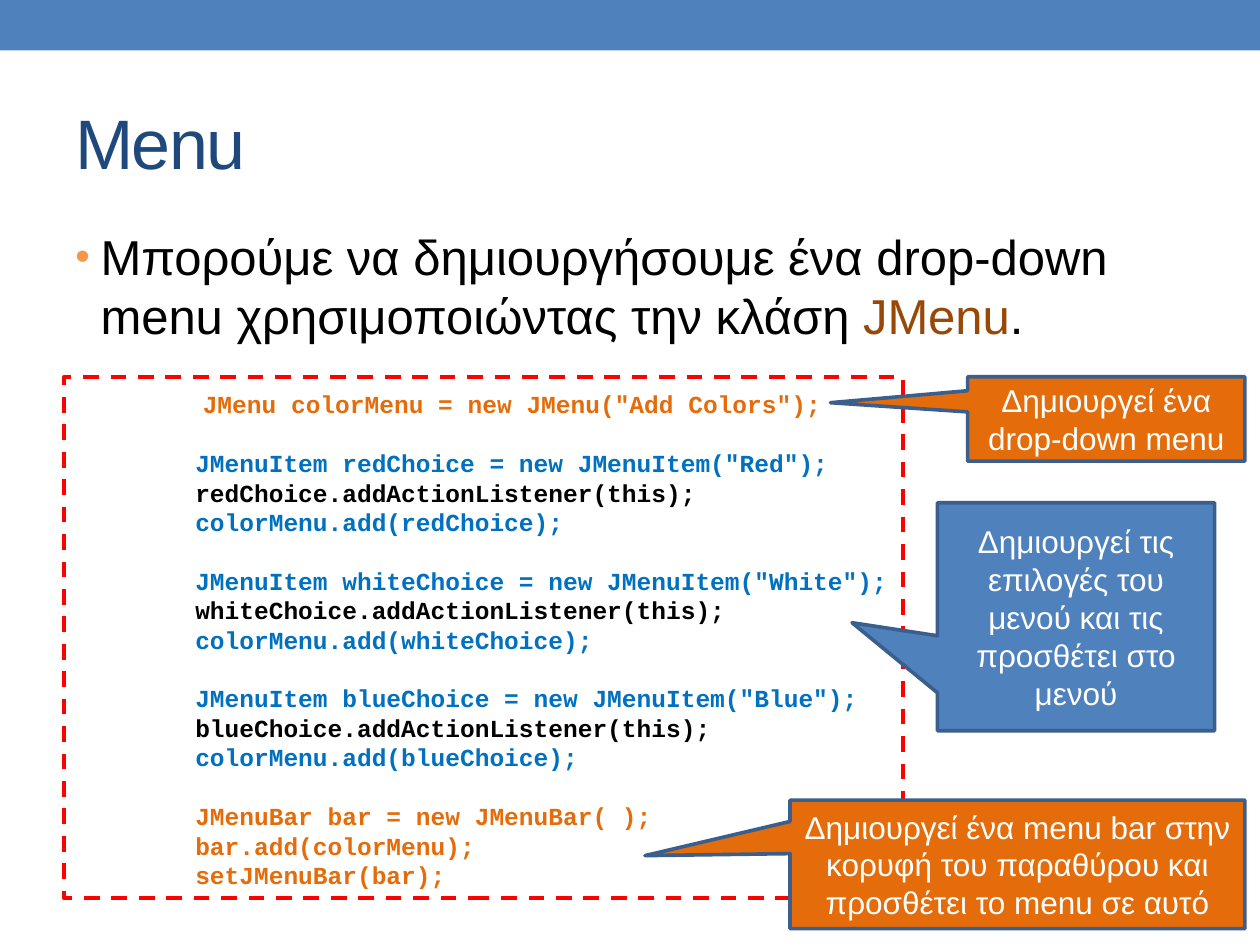
from pptx import Presentation
from pptx.dml.color import RGBColor
from pptx.enum.dml import MSO_LINE
from pptx.enum.shapes import MSO_SHAPE
from pptx.enum.text import MSO_ANCHOR, PP_ALIGN
from pptx.oxml.ns import qn
from pptx.util import Inches, Pt
from lxml.etree import SubElement

COLORS = {
    "blue": "4F81BD", "navy": "1F497D", "orange": "E46C0A", "brown": "984807",
    "code_blue": "0070C0", "black": "000000", "white": "FFFFFF",
    "red": "FF0000", "outline": "3A5F8C", "bullet": "F79646",
}

CHOICES = ["red", "white", "blue"]

CALLOUTS = [
    ((7.68, 2.99, 2.2, 0.67), (-0.995, -0.192), "orange",
     "Δημιουργεί ένα drop-down menu"),
    ((7.44, 3.99, 2.2, 1.81), (-0.808, 0.026), "blue",
     "Δημιουργεί τις επιλογές του μενού και τις προσθέτει στο μενού"),
    ((6.27, 6.35, 3.61, 1.02), (-0.819, -0.068), "orange",
     "Δημιουργεί ένα menu bar στην κορυφή του παραθύρου και προσθέτει το menu σε αυτό"),
]


def rgb(name):
    return RGBColor.from_string(COLORS[name])


def add_run(p, text, size=18, color="black", font="Arial", bold=False, spacing=None):
    r = p.add_run()
    r.text = text
    r.font.size = Pt(size)
    r.font.name = font
    r.font.bold = bold
    r.font.color.rgb = rgb(color)
    if spacing is not None:
        r._r.get_or_add_rPr().set("spc", str(spacing))
    return r


def add_box(s, kind, at, fill=None, line=None, width=1):
    sp = s.shapes.add_shape(kind, *map(Inches, at))
    sp.shadow.inherit = False
    if fill:
        sp.fill.solid()
        sp.fill.fore_color.rgb = rgb(fill)
    else:
        sp.fill.background()
    if line:
        sp.line.color.rgb = rgb(line)
        sp.line.width = Pt(width)
    else:
        sp.line.fill.background()
    return sp


def add_text_frame(s, at):
    tf = s.shapes.add_textbox(*map(Inches, at)).text_frame
    tf.word_wrap = True
    return tf


def add_title(s, text):
    tf = add_text_frame(s, (0.5, 0.58, 9, 1.08))
    tf.vertical_anchor = MSO_ANCHOR.MIDDLE
    add_run(tf.paragraphs[0], text, size=40, color="navy", spacing=-100)


def add_bullet(s, parts):
    p = add_text_frame(s, (0.5, 1.75, 9, 5.33)).paragraphs[0]
    p.space_before = Pt(5.6)
    pPr = p._p.get_or_add_pPr()
    pPr.set("marL", str(Inches(0.2)))
    pPr.set("indent", str(Inches(-0.2)))
    color = SubElement(pPr, qn("a:buClr"))
    SubElement(color, qn("a:srgbClr"), val=COLORS["bullet"])
    SubElement(pPr, qn("a:buSzPct"), val="85000")
    SubElement(pPr, qn("a:buFont"), typeface="Arial")
    SubElement(pPr, qn("a:buChar"), char="•")
    for text, color in parts:
        add_run(p, text, size=28, color=color)


def code_blocks():
    yield [('JMenu colorMenu = new JMenu("Add Colors");', "orange")]
    for name in CHOICES:
        yield [
            (f'JMenuItem {name}Choice = new JMenuItem("{name.title()}");', "code_blue"),
            (f"{name}Choice.addActionListener(this);", "black"),
            (f"colorMenu.add({name}Choice);", "code_blue"),
        ]
    yield [(line, "orange") for line in
           ("JMenuBar bar = new JMenuBar( );", "bar.add(colorMenu);", "setJMenuBar(bar);")]


def add_code(s):
    sp = add_box(s, MSO_SHAPE.RECTANGLE, (0.51, 2.99, 6.66, 4.14), line="red", width=2.25)
    sp.line.dash_style = MSO_LINE.DASH
    tf = sp.text_frame
    tf.word_wrap = True
    tf.vertical_anchor = MSO_ANCHOR.TOP
    tf.margin_left, tf.margin_top, tf.margin_right = Inches(1.04), Inches(0.1), 0
    pitch = Pt(16.8)
    for b, block in enumerate(code_blocks()):
        for i, (line, color) in enumerate(block):
            p = tf.add_paragraph() if b else tf.paragraphs[0]
            p.alignment = PP_ALIGN.LEFT
            p.line_spacing = pitch
            p.space_before = pitch if b and i == 0 else 0
            if b == 0:
                p._p.get_or_add_pPr().set("indent", str(Inches(0.06)))
            add_run(p, line, size=14, color=color, font="Courier New", bold=True)


def add_callout(s, at, tip, fill, text):
    sp = add_box(s, MSO_SHAPE.RECTANGULAR_CALLOUT, at, fill=fill, line="outline", width=2.08)
    sp.adjustments[0], sp.adjustments[1] = tip
    tf = sp.text_frame
    tf.word_wrap = True
    tf.vertical_anchor = MSO_ANCHOR.MIDDLE
    p = tf.paragraphs[0]
    p.alignment = PP_ALIGN.CENTER
    add_run(p, text, color="white")


def main():
    prs = Presentation()
    prs.slide_width, prs.slide_height = Inches(10), Inches(7.5)
    s = prs.slides.add_slide(prs.slide_layouts[6])
    add_box(s, MSO_SHAPE.RECTANGLE, (0, 0, 10, 0.4), fill="blue")
    add_title(s, "Menu")
    add_bullet(s, [
        ("Μπορούμε να δημιουργήσουμε ένα drop-down menu χρησιμοποιώντας την κλάση ", "black"),
        ("JMenu", "brown"),
        (".", "black"),
    ])
    add_code(s)
    for callout in CALLOUTS:
        add_callout(s, *callout)
    prs.save("out.pptx")


if __name__ == "__main__":
    main()
